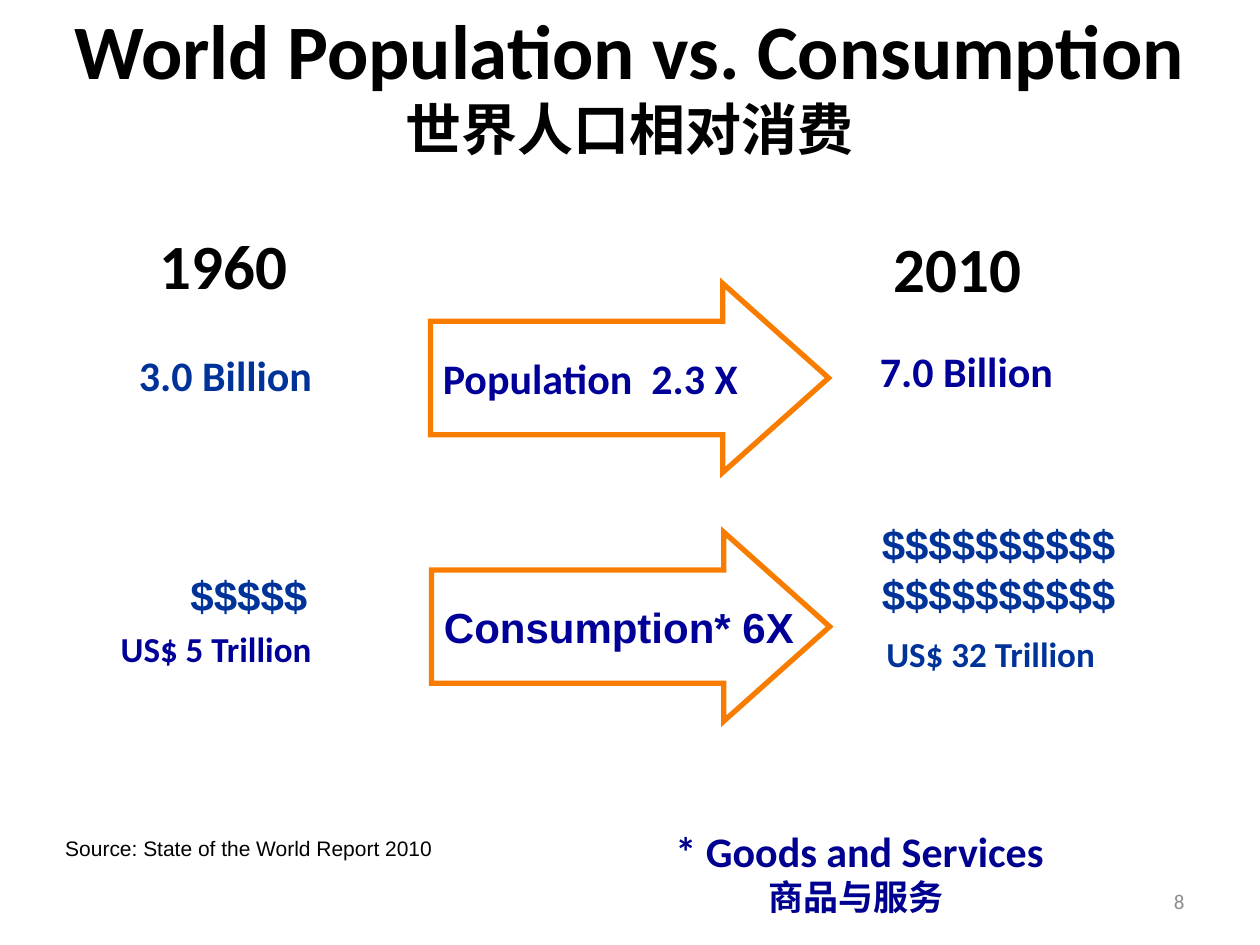
from lxml import etree
from pptx import Presentation
from pptx.dml.color import RGBColor
from pptx.enum import shapes, text
from pptx.oxml import ns
from pptx.util import Pt

COLOURS = {"black": "000000", "blue": "003399", "navy": "000099", "note": "000090",
           "orange": "F87C00", "white": "FFFFFF", "grey": "8C8C8C"}
LEFT, CENTRE, RIGHT = text.PP_ALIGN.LEFT, text.PP_ALIGN.CENTER, text.PP_ALIGN.RIGHT


def colour(name):
    return RGBColor.from_string(COLOURS[name])


def style_span(span, size, ink, font="Calibri", bold=True):
    span.font.size = Pt(size)
    span.font.name = font
    span.font.bold = bold
    span.font.color.rgb = colour(ink)


def write(shape, lines, sizes, ink, font="Calibri", bold=True, align=LEFT,
          middle=False, wrap=False):
    """Fill a shape with lines; sizes holds one size for each run of a line."""
    frame = shape.text_frame
    frame.word_wrap = wrap
    frame.vertical_anchor = text.MSO_ANCHOR.MIDDLE if middle else text.MSO_ANCHOR.TOP
    for index, line in enumerate(lines):
        para = frame.paragraphs[0] if index == 0 else frame.add_paragraph()
        para.text = line
        para.alignment = align
        for span, size in zip(para.runs, sizes[index]):
            style_span(span, size, ink, font, bold)


def fill_white(shape):
    shape.shadow.inherit = False
    shape.fill.solid()
    shape.fill.fore_color.rgb = colour("white")


def add_label(page, box, lines, size, ink, **style):
    label = page.shapes.add_textbox(*map(Pt, box))
    write(label, lines, [[size]] * len(lines), ink, **style)


def add_amount(page, box, amount, ink):
    panel = page.shapes.add_shape(shapes.MSO_SHAPE.RECTANGLE, *map(Pt, box))
    fill_white(panel)
    panel.line.fill.background()
    write(panel, [amount], [[20]], ink)


def add_title(page, box):
    title = page.shapes.add_textbox(*map(Pt, box))
    write(title, ["World Population vs. Consumption\v世界人口相对消费"], [[44, 32]],
          "black", align=CENTRE, middle=True, wrap=True)


def add_growth_arrow(page, box, caption, font):
    arrow = page.shapes.add_shape(shapes.MSO_SHAPE.RIGHT_ARROW, *map(Pt, box))
    arrow.adjustments[0], arrow.adjustments[1] = 0.6, 0.56
    fill_white(arrow)
    arrow.line.color.rgb = colour("orange")
    arrow.line.width = Pt(3)
    # Sharp corners
    outline = arrow.line.fill._xPr
    etree.SubElement(outline, ns.qn("a:miter"), lim="800000")
    write(arrow, [caption], [[24]], "navy", font=font, middle=True)


def add_year_column(page, labels, amount):
    """Place one year's heading and figures, each in its own box."""
    add_amount(page, *amount)
    for box, lines, size, ink, font in labels:
        add_label(page, box, lines, size, ink, font=font)


def add_footer(page, box):
    left, top, width, height = box
    add_label(page, (left, top + 5.8, 224.6, 21.6),
              ["Source: State of the World Report 2010"], 12, "black",
              font="Arial", bold=False)
    # Footnote, led by a smaller space
    note = page.shapes.add_textbox(Pt(left + 324), Pt(top), Pt(270), Pt(60.5))
    write(note, [" ", "商品与服务"], [[18], [20]], "note", align=CENTRE, wrap=True)
    opening = note.text_frame.paragraphs[0]
    style_span(opening.runs[0], 18, "black", bold=False)
    phrase = opening.add_run()
    phrase.text = "* Goods and Services"
    style_span(phrase, 24, "note")
    # Page number
    add_label(page, (left + width - 167.8, top + height - 28.8, 167.8, 28.8), ["8"], 12,
              "grey", bold=False, align=RIGHT, middle=True, wrap=True)


YEAR_1960 = [
    ((84.2, 126, 88.6, 51), ["1960"], 36, "black", "Calibri"),
    ((72.3, 196.2, 114.5, 36), ["3.0 Billion"], 24, "blue", "Calibri"),
    ((101.8, 321.8, 81.4, 36), ["$" * 5], 24, "blue", "Arial"),
]
YEAR_2010 = [
    ((503.6, 127.8, 88.6, 51), ["2010"], 36, "black", "Calibri"),
    ((490.3, 193.7, 119.5, 36), [" 7.0 Billion"], 24, "navy", "Calibri"),
    ((496.8, 292.6, 149.8, 65.5), ["$" * 10] * 2, 24, "blue", "Arial"),
]
AMOUNT_1960 = ((61.9, 355, 124.6, 31.7), "US$ 5 Trillion", "navy")
AMOUNT_2010 = ((494.9, 357.8, 139, 31.7), " US$ 32 Trillion", "blue")


def main():
    deck = Presentation()
    deck.slide_width, deck.slide_height = Pt(720), Pt(540)
    page = deck.slides.add_slide(deck.slide_layouts[6])

    # Title
    add_title(page, (0, 1.9, 720, 90))

    # Figures for both years
    add_year_column(page, YEAR_1960, AMOUNT_1960)
    add_year_column(page, YEAR_2010, AMOUNT_2010)

    # Growth between the years
    add_growth_arrow(page, (246, 162, 227.5, 108), "Population  2.3 X", "Calibri")
    add_growth_arrow(page, (246.6, 304.1, 227.5, 108), "Consumption* 6X", "Arial")

    # Source, footnote and page number
    add_footer(page, (30.2, 468, 653.8, 61.2))

    deck.save("out.pptx")


if __name__ == "__main__":
    main()
